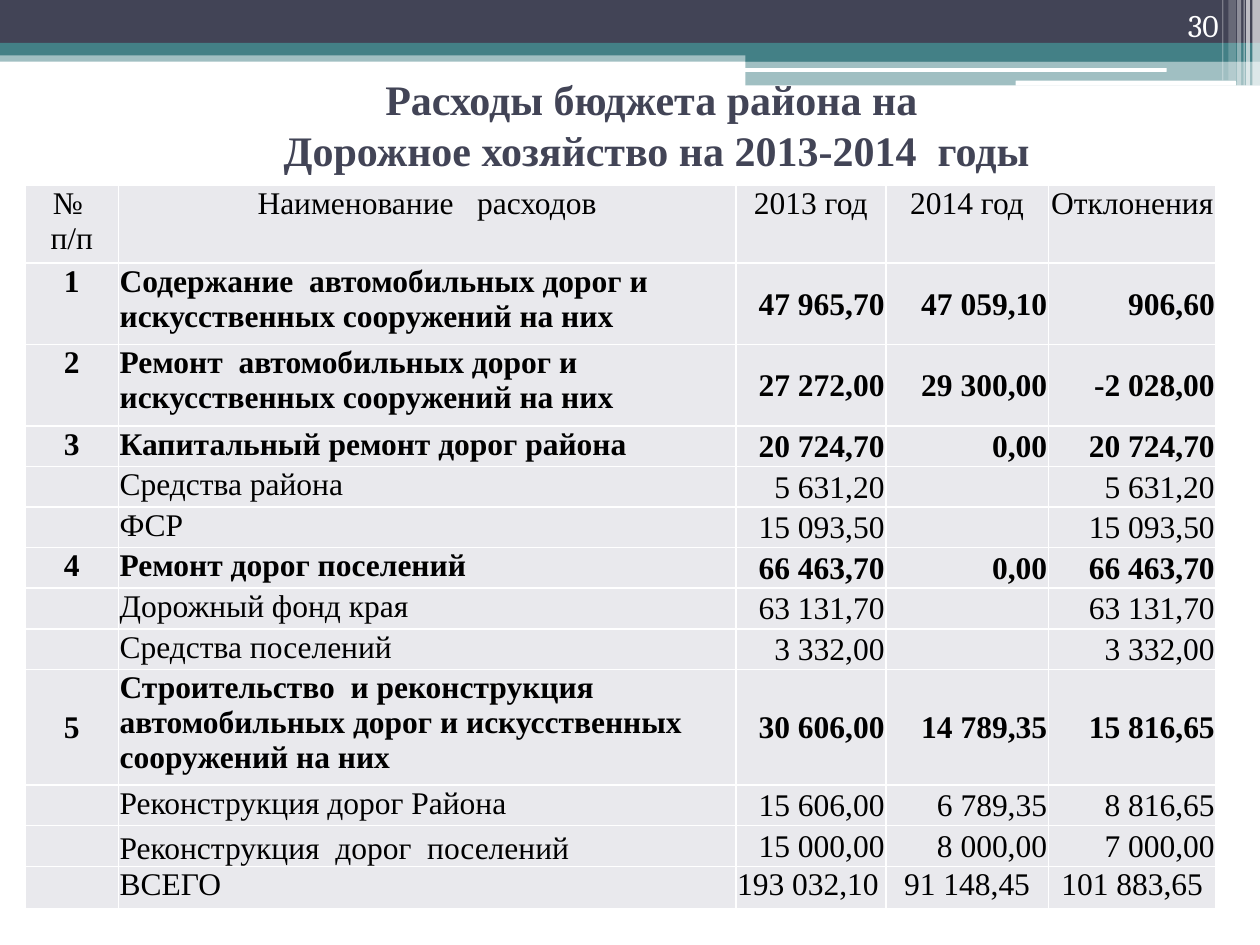
import pptx
import pptx.dml.color
import pptx.enum.shapes
import pptx.enum.text
import pptx.oxml
import pptx.oxml.ns
import pptx.util

Pt = pptx.util.Pt
ALIGN = pptx.enum.text.PP_ALIGN
ANCHOR = pptx.enum.text.MSO_ANCHOR
SHAPE = pptx.enum.shapes.MSO_SHAPE

THEME = {
    "navy": "424456", "teal": "438086", "white": "FFFFFF", "black": "000000",
    "cell": "E9E9ED", "serif": "Times New Roman", "number": "Cambria",
    "title_size": 24, "text_size": 18,
}

TITLE = "Расходы бюджета района на\n Дорожное хозяйство на 2013-2014  годы"
PAGE_NUMBER = "30"
HEADER = ("№ \nп/п", "Наименование   расходов", "2013 год", "2014 год", "Отклонения")
ROWS = [
    ("1", "Содержание  автомобильных дорог и искусственных сооружений на них",
     "47 965,70", "47 059,10", "906,60"),
    ("2", "Ремонт  автомобильных дорог и искусственных сооружений на них",
     "27 272,00", "29 300,00", "-2 028,00"),
    ("3", "Капитальный ремонт дорог района", "20 724,70", "0,00", "20 724,70"),
    ("", "Средства района", "5 631,20", "", "5 631,20"),
    ("", "ФСР", "15 093,50", "", "15 093,50"),
    ("4", "Ремонт дорог поселений", "66 463,70", "0,00", "66 463,70"),
    ("", "Дорожный фонд края", "63 131,70", "", "63 131,70"),
    ("", "Средства поселений", "3 332,00", "", "3 332,00"),
    ("5", "Строительство  и реконструкция  автомобильных дорог и искусственных сооружений на них",
     "30 606,00", "14 789,35", "15 816,65"),
    ("", "Реконструкция дорог Района", "15 606,00", "6 789,35", "8 816,65"),
    ("", "Реконструкция  дорог  поселений", "15 000,00", "8 000,00", "7 000,00"),
]
TOTAL = ("", "ВСЕГО", "193 032,10", "91 148,45", "101 883,65")

COLUMN_WIDTHS = (53.3, 352.8, 85.7, 92.9, 95.8)
ROW_HEIGHTS = (44.6, 46.5, 46.5) + (23.2,) * 6 + (66.2, 23.2, 23.2, 24.2)

BANDS = [
    (0, 28.8, 720, 6.5, "teal", 50),
    (0, 0, 720, 24.5, "navy", 100),
    (0, 24.5, 720, 7.2, "teal", 100),
    (426, 28.1, 294, 7.2, "teal", 100),
    (426, 34.6, 294, 14.2, "teal", 50),
]
GROOVES = [(425.5, 38.9, 241.2, 2.2), (580.3, 46.1, 126, 2.9)]
STRIPES = [
    (715.7, 4.3, 49, 65), (712.1, 2.2, 49, 65), (710.6, 0.7, 49, 60),
    (707, 2.2, 49, 40), (702, 4.3, 46, 20), (698.4, 0.7, 46, 30),
]


def color(name):
    return pptx.dml.color.RGBColor.from_string(THEME[name])


def write(frame, text, size="text_size", font="serif", ink="black", bold=False, align=ALIGN.LEFT):
    para = frame.paragraphs[0]
    para.alignment = align
    for index, line in enumerate(text.split("\n")):
        if index:
            para.add_line_break()
        span = para.add_run()
        span.text = line
        span.font.size = Pt(THEME[size])
        span.font.name = THEME[font]
        span.font.bold = bold
        span.font.color.rgb = color(ink)


def add_bar(page, left, top, width, height, fill, opacity=100, kind=SHAPE.RECTANGLE):
    bar = page.shapes.add_shape(kind, Pt(left), Pt(top), Pt(width), Pt(height))
    bar.shadow.inherit = False
    bar.fill.solid()
    bar.fill.fore_color.rgb = color(fill)
    bar.line.fill.background()
    if opacity < 100:
        tint = bar.fill._xPr.find(".//" + pptx.oxml.ns.qn("a:srgbClr"))
        tint.append(pptx.oxml.parse_xml(
            f'<a:alpha {pptx.oxml.ns.nsdecls("a")} val="{opacity * 1000}"/>'))


def style_cell(cell):
    cell.margin_left = cell.margin_right = cell.margin_top = Pt(0.7)
    cell.margin_bottom = Pt(0)
    properties = cell._tc.get_or_add_tcPr()
    for side in "LRTB":
        properties.append(pptx.oxml.parse_xml(
            f'<a:ln{side} {pptx.oxml.ns.nsdecls("a")} w="{Pt(1)}"><a:solidFill>'
            f'<a:srgbClr val="{THEME["white"]}"/></a:solidFill></a:ln{side}>'))
    cell.fill.solid()
    cell.fill.fore_color.rgb = color("cell")


def cell_layout(row, column):
    last = len(ROWS) + 1
    if row == 0:
        return ALIGN.CENTER, ANCHOR.TOP
    if row == last:
        return (ALIGN.CENTER if column > 2 else ALIGN.LEFT), ANCHOR.TOP
    if column == 0:
        return ALIGN.CENTER, ANCHOR.MIDDLE if ROWS[row - 1][0] == "5" else ANCHOR.TOP
    if column == 1:
        return ALIGN.LEFT, ANCHOR.BOTTOM if row == last - 1 else ANCHOR.TOP
    return ALIGN.RIGHT, ANCHOR.MIDDLE


def add_budget_table(page):
    content = [HEADER, *ROWS, TOTAL]
    table = page.shapes.add_table(
        len(content), len(HEADER), Pt(14.4), Pt(105.8),
        Pt(sum(COLUMN_WIDTHS)), Pt(sum(ROW_HEIGHTS))).table
    for column, width in zip(table.columns, COLUMN_WIDTHS):
        column.width = Pt(width)
    for row, height in zip(table.rows, ROW_HEIGHTS):
        row.height = Pt(height)
    for r, values in enumerate(content):
        numbered = r > 0 and values[0] != ""
        for c, value in enumerate(values):
            cell = table.cell(r, c)
            style_cell(cell)
            if value:
                align, cell.vertical_anchor = cell_layout(r, c)
                write(cell.text_frame, value, bold=numbered, align=align)


def main():
    deck = pptx.Presentation()
    deck.slide_width, deck.slide_height = Pt(720), Pt(540)
    page = deck.slides.add_slide(deck.slide_layouts[5])

    for band in BANDS:
        add_bar(page, *band)
    for groove in GROOVES:
        add_bar(page, *groove, "white", kind=SHAPE.ROUNDED_RECTANGLE)
    for left, width, height, opacity in STRIPES:
        add_bar(page, left, 0, width, height, "white", opacity)
    add_budget_table(page)

    title = page.shapes.title
    title.left, title.top, title.width, title.height = Pt(48.2), Pt(37.4), Pt(648), Pt(67)
    title.text_frame.auto_size = pptx.enum.text.MSO_AUTO_SIZE.NONE
    title.text_frame.vertical_anchor = ANCHOR.MIDDLE
    write(title.text_frame, TITLE, size="title_size", ink="navy", bold=True, align=ALIGN.CENTER)
    title.element.getparent().append(title.element)

    box = page.shapes.add_textbox(Pt(643.7), Pt(0), Pt(59.8), Pt(28.8))
    box.text_frame.word_wrap = True
    box.text_frame.vertical_anchor = ANCHOR.BOTTOM
    write(box.text_frame, PAGE_NUMBER, font="number", ink="white", align=ALIGN.RIGHT)

    deck.save("out.pptx")


if __name__ == "__main__":
    main()
